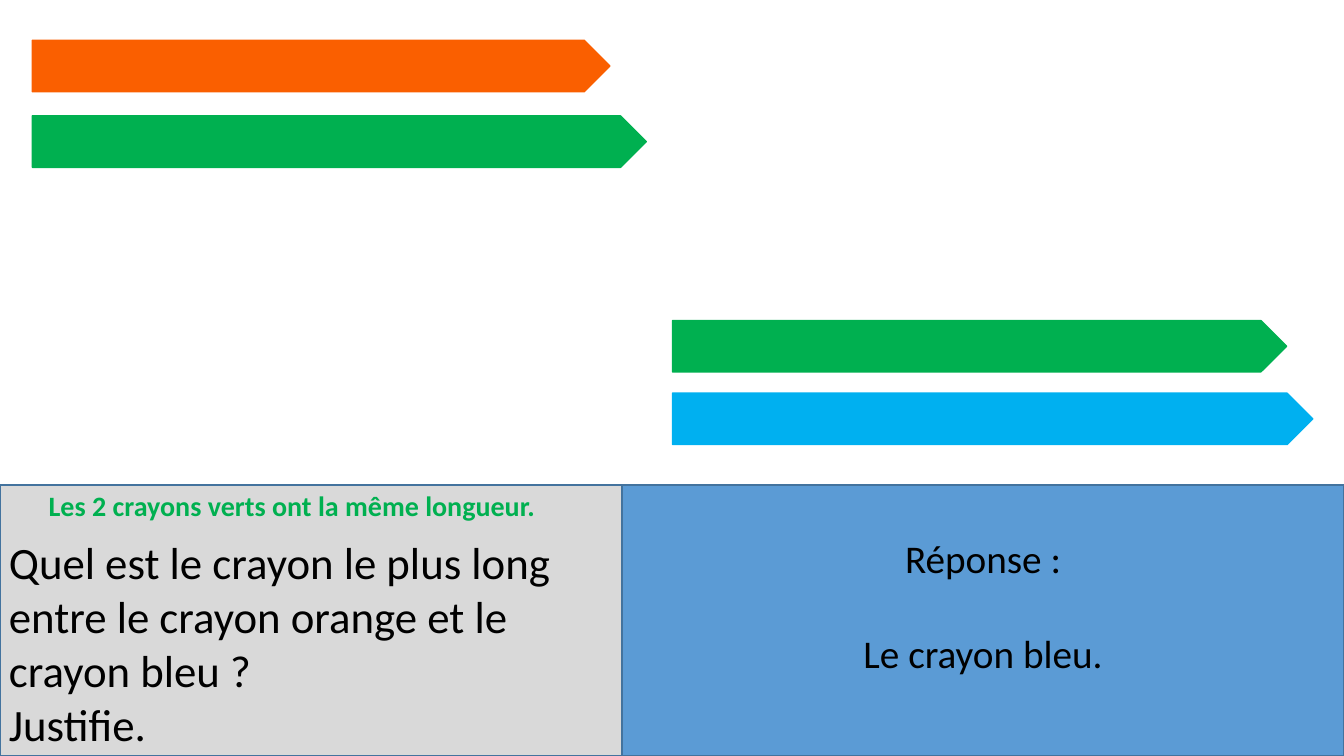
from pptx import Presentation
from pptx.dml.color import RGBColor
from pptx.enum.shapes import MSO_SHAPE
from pptx.enum.text import MSO_ANCHOR, MSO_AUTO_SIZE, PP_ALIGN
from pptx.util import Inches, Pt

RECTANGLE, PENCIL = MSO_SHAPE.RECTANGLE, MSO_SHAPE.PENTAGON
LEFT, CENTER = PP_ALIGN.LEFT, PP_ALIGN.CENTER
TOP, MIDDLE = MSO_ANCHOR.TOP, MSO_ANCHOR.MIDDLE
GROW = MSO_AUTO_SIZE.SHAPE_TO_FIT_TEXT

THEME = {
    "font": "Calibri",
    "orange": "FA5F00",
    "green": "00B050",
    "blue": "00B0F0",
    "question_panel": "D9D9D9",
    "answer_panel": "5B9BD5",
    "panel_line": "43739E",
    "ink": "000000",
    "question_size": 32,
    "answer_size": 28,
    "hint_size": 20,
}

HINT = ["Les 2 crayons verts ont la même longueur."]
QUESTION = [
    "Quel est le crayon le plus long entre le crayon orange et le crayon bleu ?",
    "Justifie.",
]
ANSWER = ["Réponse :", "Le crayon bleu."]

PENCIL_LENGTHS = {"orange": 5.73, "green": 6.09, "blue": 6.35}
PENCIL_PAIRS = [
    (0.32, [("orange", 0.4), ("green", 1.15)]),
    (6.67, [("green", 3.18), ("blue", 3.9)]),
]
PENCIL_HEIGHT = 0.51

SLIDE_WIDTH, SLIDE_HEIGHT = 13.33, 7.5
PANEL_TOP = 4.81
PANEL_HEIGHT = SLIDE_HEIGHT - PANEL_TOP
ANSWER_LEFT = 6.17
ANSWER_BOTTOM_INSET = 0.35
ANSWER_GAP = 34


def color(name):
    return RGBColor.from_string(THEME[name])


def draw(slide, outline, box, fill, line):
    shape = slide.shapes.add_shape(outline, *map(Inches, box))
    shape.shadow.inherit = False
    shape.fill.solid()
    shape.fill.fore_color.rgb = color(fill)
    shape.line.color.rgb = color(line)
    shape.line.width = Pt(1)
    return shape


def write(frame, lines, size, ink="ink", align=LEFT, bold=False, gap=0, anchor=TOP):
    frame.word_wrap = True
    frame.vertical_anchor = anchor
    for index, line in enumerate(lines):
        paragraph = frame.add_paragraph() if index else frame.paragraphs[0]
        paragraph.alignment = align
        paragraph.space_before = Pt(gap if index else 0)
        run = paragraph.add_run()
        run.text = line
        run.font.name = THEME["font"]
        run.font.size = Pt(THEME[size])
        run.font.bold = bold
        run.font.color.rgb = color(ink)


def add_text(slide, box, lines, size, **style):
    frame = slide.shapes.add_textbox(*map(Inches, box)).text_frame
    write(frame, lines, size, **style)
    frame.auto_size = GROW


def main():
    deck = Presentation()
    deck.slide_width, deck.slide_height = Inches(SLIDE_WIDTH), Inches(SLIDE_HEIGHT)
    slide = deck.slides.add_slide(deck.slide_layouts[6])

    question_box = (0, PANEL_TOP, SLIDE_WIDTH, PANEL_HEIGHT)
    draw(slide, RECTANGLE, question_box, "question_panel", "panel_line")
    add_text(slide, (-0.01, 5.26, ANSWER_LEFT, 2.26), QUESTION, "question_size")

    answer_box = (ANSWER_LEFT, PANEL_TOP, SLIDE_WIDTH - ANSWER_LEFT, PANEL_HEIGHT)
    answer = draw(slide, RECTANGLE, answer_box, "answer_panel", "panel_line").text_frame
    answer.margin_bottom = Inches(ANSWER_BOTTOM_INSET)
    write(answer, ANSWER, "answer_size", align=CENTER, gap=ANSWER_GAP, anchor=MIDDLE)

    for left, pencils in PENCIL_PAIRS:
        for name, top in pencils:
            pencil_box = (left, top, PENCIL_LENGTHS[name], PENCIL_HEIGHT)
            draw(slide, PENCIL, pencil_box, name, name)

    add_text(slide, (0, 4.8, 5.79, 0.44), HINT, "hint_size",
             ink="green", align=CENTER, bold=True)

    deck.save("out.pptx")


if __name__ == "__main__":
    main()
